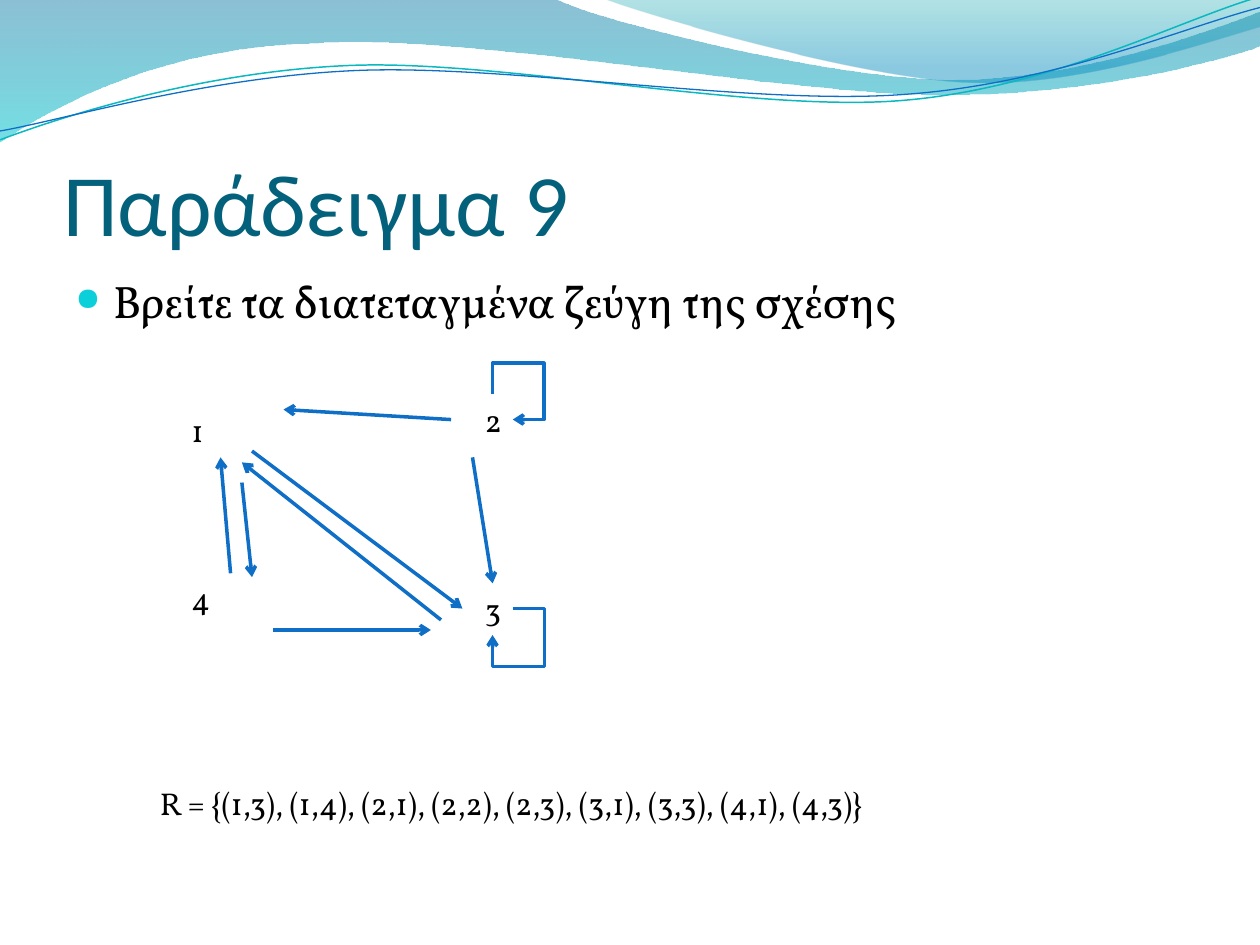
"""Builds a slide that asks for the ordered pairs of a relation drawn as a graph."""
from math import cos, radians, sin

from lxml import etree
from pptx import Presentation
from pptx.dml.color import RGBColor
from pptx.enum.shapes import MSO_CONNECTOR
from pptx.enum.text import MSO_ANCHOR, MSO_AUTO_SIZE, PP_ALIGN
from pptx.oxml.ns import qn
from pptx.util import Inches, Pt

COLOURS = {
    "title": "04617B", "text": "000000", "bullet": "0BD0D9", "edge": "0F6FC6",
    "teal": "0AB8BF", "deep": "0074A1", "aqua": "00C6CF", "mint": "00A1A9", "sky": "008BBF",
}
TILT = 2.7

LEFT_WAVE = [[(0, 0)], [(4.4, -0.01)],
             [(4.76, 0.17), (6.64, 0.63), (7.58, 0.63)],
             [(8.53, 0.63), (9.58, 0.26), (10, 0.09)], [(10.01, 0.36)],
             [(9.83, 0.44), (8.7, 0.76), (7.46, 0.75)],
             [(6.22, 0.75), (3.82, 0.28), (2.57, 0.34)],
             [(1.29, 0.36), (0.46, 0.83), (-0.01, 1.13)]]
RIGHT_WAVE = [[(4.79, -0.01)],
              [(5.09, 0.11), (6.82, 0.62), (7.69, 0.65)],
              [(8.56, 0.69), (9.61, 0.32), (10, 0.21)], [(10, 0)]]
TEAL_LINE = [[(0, 1.11)],
             [(0.48, 0.93), (1.58, 0.57), (2.77, 0.52)],
             [(3.95, 0.47), (5.93, 0.89), (7.13, 0.8)],
             [(8.33, 0.71), (9.38, 0.15), (9.98, -0.02)]]
BLUE_LINE = [[(0, 1.04)],
             [(0.47, 0.96), (1.64, 0.61), (2.83, 0.56)],
             [(4.03, 0.51), (5.97, 0.84), (7.17, 0.75)],
             [(8.36, 0.67), (9.41, 0.21), (10, 0.06)]]

NODES = [("1", 1.42, 3.21, 0.28), ("2", 3.75, 3.13, 0.32),
         ("4", 1.42, 4.55, 0.34), ("3", 3.75, 4.63, 0.32)]
EDGES = [((2, 3.58), (3.67, 4.83)), ((3.58, 3.33), (2.25, 3.25)),
         ((3.75, 3.63), (3.91, 4.63)), ((3.5, 4.92), (1.92, 3.67)),
         ((1.83, 4.55), (1.75, 3.63)), ((2.17, 5), (3.42, 5)),
         ((1.92, 3.83), (2, 4.58))]


def colour(name):
    """Return a named colour."""
    return RGBColor.from_string(COLOURS[name])


def turned(point, centre, degrees):
    """Turn a point clockwise about a centre."""
    x, y = point[0] - centre[0], point[1] - centre[1]
    c, s = cos(radians(degrees)), sin(radians(degrees))
    return centre[0] + x * c - y * s, centre[1] + x * s + y * c


def write(paragraph, text, *, font="Vollkorn", size=18, ink="text"):
    """Put formatted text in a paragraph."""
    span = paragraph.add_run()
    span.text = text
    span.font.name = font
    span.font.size = Pt(size)
    span.font.color.rgb = colour(ink)


class SlideBuilder:
    """Holds the current slide and the style of its elements."""

    def __init__(self, page):
        self.page = page

    def outline(self, parts, closed):
        """Build a freeform whose three-point parts are cubic curves."""
        ends = [(Inches(x), Inches(y)) for x, y in (part[-1] for part in parts)]
        builder = self.page.shapes.build_freeform(*ends[0])
        builder.add_line_segments(ends[1:], close=closed)
        shape = builder.convert_to_shape()
        shape.shadow.inherit = False
        segments = list(shape._element.spPr.iter(qn("a:lnTo")))
        for segment, part in zip(segments, parts[1:]):
            if len(part) == 3:
                curve = etree.Element(qn("a:cubicBezTo"))
                for x, y in part:
                    etree.SubElement(curve, qn("a:pt"), x=str(Inches(x) - shape.left),
                                     y=str(Inches(y) - shape.top))
                segment.getparent().replace(segment, curve)
        return shape

    def wave(self, parts, stops):
        """Draw a closed wave with a see-through gradient."""
        shape = self.outline(parts, True)
        shape.line.fill.background()
        shape.fill.gradient()
        shape.fill.gradient_angle = 270
        for stop, (position, ink, _) in zip(shape.fill.gradient_stops, stops):
            stop.position = position
            stop.color.rgb = colour(ink)
        for node, (_, _, opacity) in zip(shape._element.spPr.iter(qn("a:srgbClr")), stops):
            etree.SubElement(node, qn("a:alpha"), val=str(opacity * 1000))

    def strand(self, parts, centre, ink, width):
        """Draw a thin open curve in a tilted frame."""
        level = [[turned(point, centre, TILT) for point in part] for part in parts]
        shape = self.outline(level, False)
        shape.rotation = 360 - TILT
        shape.fill.background()
        shape.line.color.rgb = colour(ink)
        shape.line.width = Pt(width)

    def title(self, text):
        """Place and fill the title."""
        box = self.page.shapes.title
        box.left, box.top, box.width, box.height = map(Inches, (0.5, 0.77, 9, 1.25))
        frame = box.text_frame
        frame.margin_left = frame.margin_right = frame.margin_bottom = 0
        frame.margin_top = Inches(0.05)
        frame.vertical_anchor = MSO_ANCHOR.BOTTOM
        frame.auto_size = MSO_AUTO_SIZE.NONE
        paragraph = frame.paragraphs[0]
        paragraph.alignment = PP_ALIGN.LEFT
        write(paragraph, text, font="Calibri", size=50, ink="title")

    def bullet(self, text):
        """Write the bulleted task."""
        box = self.page.shapes.add_textbox(*map(Inches, (0.5, 2.12, 9, 0.8)))
        box.text_frame.word_wrap = True
        paragraph = box.text_frame.paragraphs[0]
        props = paragraph._p.get_or_add_pPr()
        props.set("marL", str(Inches(0.3)))
        props.set("indent", str(-Inches(0.3)))
        tint = etree.SubElement(props, qn("a:buClr"))
        etree.SubElement(tint, qn("a:srgbClr"), val=COLOURS["bullet"])
        etree.SubElement(props, qn("a:buSzPct"), val="70000")
        etree.SubElement(props, qn("a:buChar"), char="●")
        write(paragraph, text, size=26)

    def label(self, text, left, top, width):
        """Write a single unwrapped line."""
        box = self.page.shapes.add_textbox(*map(Inches, (left, top, width, 0.4)))
        box.text_frame.word_wrap = False
        box.text_frame.auto_size = MSO_AUTO_SIZE.SHAPE_TO_FIT_TEXT
        write(box.text_frame.paragraphs[0], text)

    def arrow(self, start, end, kind=MSO_CONNECTOR.STRAIGHT):
        """Draw an arrow."""
        edge = self.page.shapes.add_connector(kind, *map(Inches, (*start, *end)))
        edge.line.color.rgb = colour("edge")
        edge.line.width = Pt(2)
        props = edge._element.spPr
        etree.SubElement(props.find(qn("a:ln")), qn("a:tailEnd"), type="arrow")
        etree.SubElement(props, qn("a:effectLst"))
        return edge

    def loop(self, start, end, bends, turn=0):
        """Draw an arrow that bends back to its own node."""
        edge = self.arrow(start, end, MSO_CONNECTOR.ELBOW)
        props = edge._element.spPr
        props.find(qn("a:xfrm")).set("rot", str(turn * 60000))
        geometry = props.find(qn("a:prstGeom"))
        geometry.set("prst", "bentConnector4")
        guides = geometry.find(qn("a:avLst"))
        for number, bend in enumerate(bends, 1):
            etree.SubElement(guides, qn("a:gd"), name=f"adj{number}",
                             fmla=f"val {round(bend * 100000)}")


def main():
    """Build and save the deck."""
    deck = Presentation()
    deck.slide_width, deck.slide_height = Inches(10), Inches(7.5)
    slide = SlideBuilder(deck.slides.add_slide(deck.slide_layouts[5]))
    slide.wave(LEFT_WAVE, [(0, "deep", 45), (1, "aqua", 55)])
    slide.wave(RIGHT_WAVE, [(0, "mint", 30), (0.8, "sky", 45)])
    slide.strand(TEAL_LINE, (4.99, 0.58), "teal", 0.85)
    slide.strand(BLUE_LINE, (5, 0.59), "edge", 0.75)
    slide.title("Παράδειγμα 9")
    slide.bullet("Βρείτε τα διατεταγμένα ζεύγη της σχέσης")
    for node in NODES:
        slide.label(*node)
    for start, end in EDGES:
        slide.arrow(start, end)
    slide.loop((4.09, 3.15), (3.89, 3.31), (-1.24, 2.54), turn=270)
    slide.loop((4.07, 4.83), (3.91, 5.04), (-1.57, 2.2))
    slide.label("R = {(1,3), (1,4), (2,1), (2,2), (2,3), (3,1), (3,3), (4,1), (4,3)}",
                1.17, 6.17, 6.06)
    deck.save("out.pptx")


if __name__ == "__main__":
    main()
